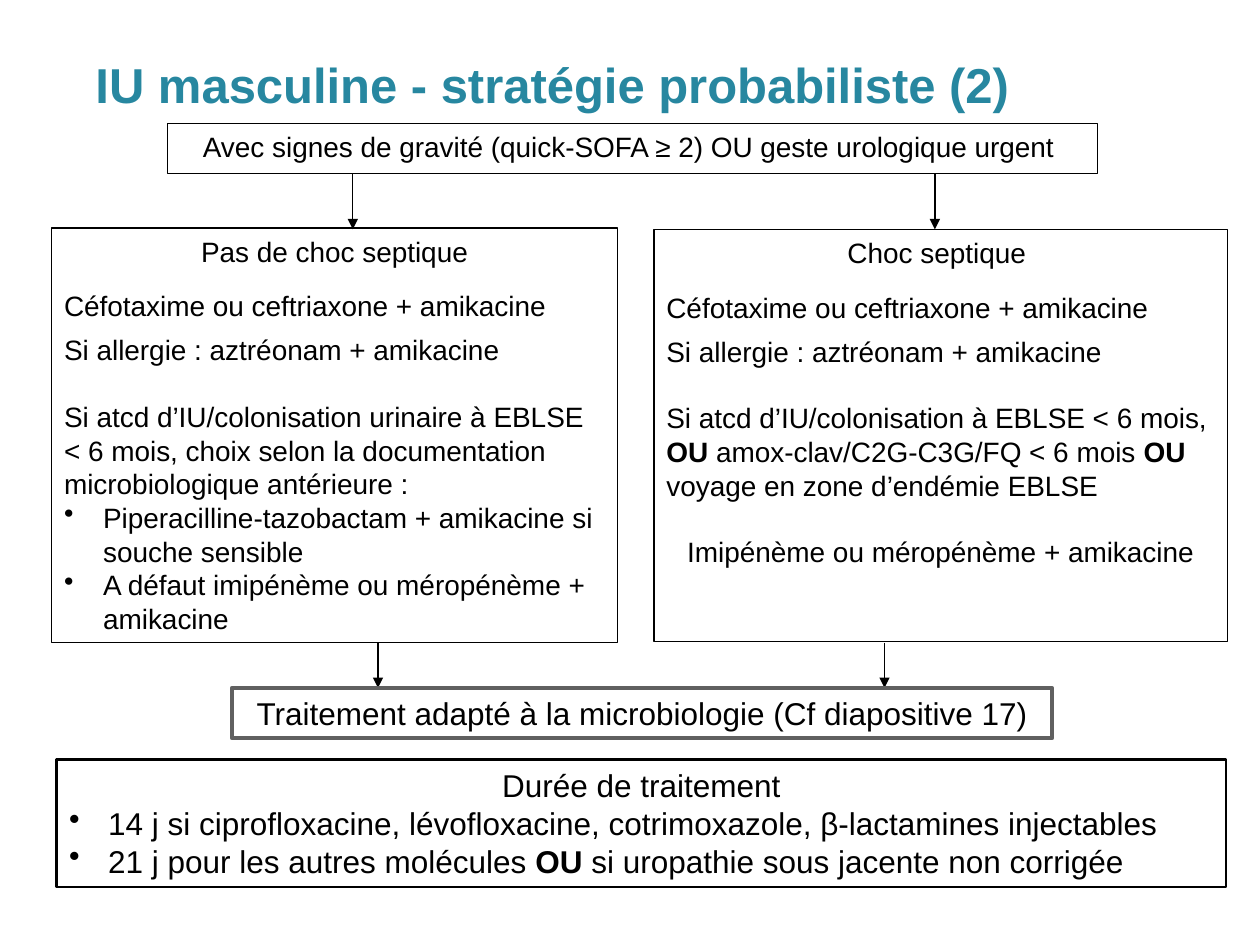
import pptx
import pptx.util
import pptx.dml.color
import pptx.enum.shapes
import pptx.enum.text
import pptx.oxml.ns
import pptx.oxml.xmlchemy

Inches, Pt = pptx.util.Inches, pptx.util.Pt
ANCHOR = pptx.enum.text.MSO_ANCHOR
ALIGN = pptx.enum.text.PP_ALIGN
INDENT = Inches(0.31)
BLANK = 19  # points, one empty line
BLACK, WHITE, GREY, TEAL = "000000", "FFFFFF", "606060", "2787A0"


def color(text):
    return pptx.dml.color.RGBColor.from_string(text)


def apply(item, values):
    for name, value in values.items():
        setattr(item, name, value)


def add(parent, tag, **values):
    child = pptx.oxml.xmlchemy.OxmlElement(tag)
    for name, value in values.items():
        child.set(name, value)
    parent.append(child)


def bullet(para):
    props = para._p.get_or_add_pPr()
    props.set("marL", str(int(INDENT)))
    props.set("indent", str(-int(INDENT)))
    add(props, "a:buChar", char="•")


def write(frame, rows, size, tint=BLACK, bold=False):
    """Each row is (kind, text, points after); ** switches bold on and off."""
    for index, (kind, text, after) in enumerate(rows):
        para = frame.paragraphs[0] if index == 0 else frame.add_paragraph()
        if kind == "bullet":
            bullet(para)
        apply(para, {
            "alignment": ALIGN.CENTER if kind == "center" else ALIGN.LEFT,
            "space_before": Pt(0),
            "space_after": Pt(after),
        })
        for part, piece in enumerate(text.split("**")):
            if piece:
                run = para.add_run()
                run.text = piece
                apply(run.font, {"name": "Arial", "size": Pt(size),
                                 "bold": bold or part % 2 == 1})
                run.font.color.rgb = color(tint)


def box(slide, place, rows, size=16, line=BLACK, width=0.75, wrap=True):
    shape = slide.shapes.add_shape(
        pptx.enum.shapes.MSO_SHAPE.RECTANGLE, *map(Inches, place))
    shape.shadow.inherit = False
    shape.fill.solid()
    shape.fill.fore_color.rgb = color(WHITE)
    shape.line.color.rgb = color(line)
    shape.line.width = Pt(width)
    apply(shape.text_frame, {"word_wrap": wrap, "vertical_anchor": ANCHOR.TOP})
    write(shape.text_frame, rows, size)


def title(slide, text):
    frame = slide.shapes.add_textbox(
        *map(Inches, (0.66, 0.24, 9.34, 0.71))).text_frame
    apply(frame, {"word_wrap": True, "vertical_anchor": ANCHOR.BOTTOM})
    write(frame, [("left", text, 0)], 28, TEAL, True)


def arrow(slide, x, top, bottom):
    link = slide.shapes.add_connector(
        pptx.enum.shapes.MSO_CONNECTOR.STRAIGHT,
        *map(Inches, (x, top, x, bottom)))
    link.line.color.rgb = color(BLACK)
    link.line.width = Pt(0.75)
    props = link._element.spPr
    add(props.find(pptx.oxml.ns.qn("a:ln")), "a:tailEnd", type="triangle")
    add(props, "a:effectLst")


def choice(head, rows):
    """Rows of one branch, opened by the treatment both branches share."""
    return [
        ("center", head, 12),
        ("left", "Céfotaxime ou ceftriaxone + amikacine", 6),
        ("left", "Si allergie : aztréonam + amikacine", BLANK),
    ] + rows


def main():
    deck = pptx.Presentation()
    apply(deck, {"slide_width": Inches(10), "slide_height": Inches(7.5)})
    slide = deck.slides.add_slide(deck.slide_layouts[6])

    title(slide, "IU masculine - stratégie probabiliste (2)")

    # Starting case
    box(slide, (1.33, 0.98, 7.38, 0.4), [
        ("center", "Avec signes de gravité (quick-SOFA ≥ 2) OU geste "
                   "urologique urgent ", 0)])

    # The two branches
    box(slide, (0.41, 1.81, 4.49, 3.29), choice("Pas de choc septique", [
        ("left", "Si atcd d’IU/colonisation urinaire à EBLSE < 6 mois, choix "
                 "selon la documentation microbiologique antérieure :", 0),
        ("bullet", "Piperacilline-tazobactam + amikacine si souche sensible", 0),
        ("bullet", "A défaut imipénème ou méropénème + amikacine", 0)]))
    box(slide, (5.19, 1.82, 4.55, 3.27), choice("Choc septique ", [
        ("left", "Si atcd d’IU/colonisation à EBLSE < 6 mois, **OU **"
                 "amox-clav/C2G-C3G/FQ < 6 mois **OU **"
                 "voyage en zone d’endémie EBLSE", BLANK),
        ("center", "Imipénème ou méropénème + amikacine", 0)]))

    # Arrows into and out of the branches
    for x in (2.8, 7.42):
        arrow(slide, x, 1.38, 1.82)
    for x in (3, 7.02):
        arrow(slide, x, 5.1, 5.46)

    # Duration and follow-up treatment
    box(slide, (0.45, 6.03, 9.28, 1.01), [
        ("center", "Durée de traitement", 0),
        ("bullet", "14 j si ciprofloxacine, lévofloxacine, cotrimoxazole, "
                   "β-lactamines injectables", 0),
        ("bullet", "21 j pour les autres molécules **OU** si uropathie sous "
                   "jacente non corrigée", 0)], 18, width=1.5)
    box(slide, (1.84, 5.46, 6.51, 0.4), [
        ("center", "Traitement adapté à la microbiologie "
                   "(Cf diapositive 17)", 0)], 18, GREY, 2.25, False)

    deck.save("out.pptx")


if __name__ == "__main__":
    main()
